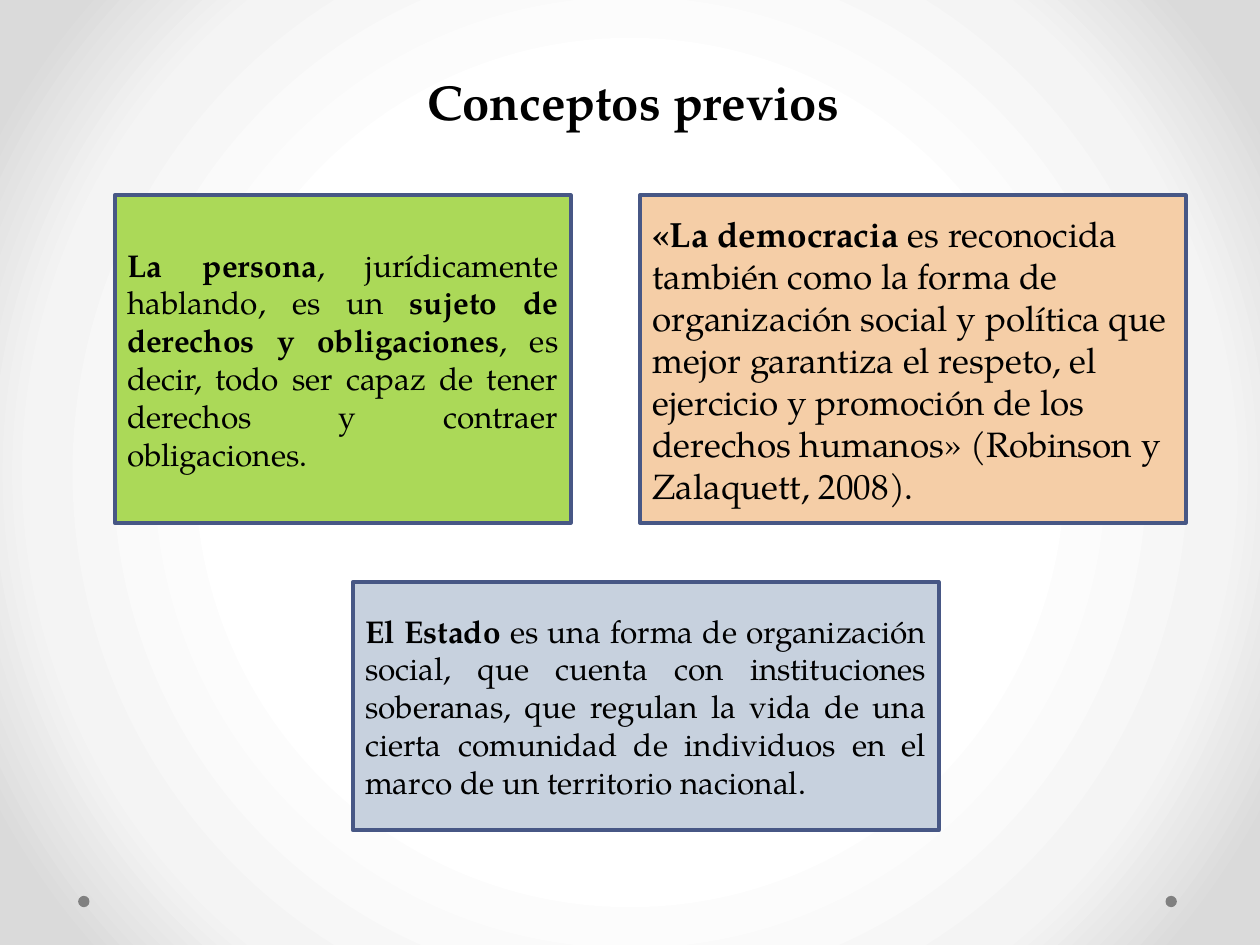
from lxml import etree
from pptx import Presentation
from pptx.dml.color import RGBColor
from pptx.enum.shapes import MSO_SHAPE
from pptx.enum.text import MSO_ANCHOR, PP_ALIGN
from pptx.oxml import parse_xml
from pptx.oxml.ns import nsdecls
from pptx.util import Inches, Pt

RECTANGLE, OVAL = MSO_SHAPE.RECTANGLE, MSO_SHAPE.OVAL
MIDDLE = MSO_ANCHOR.MIDDLE
LEFT, JUSTIFY = PP_ALIGN.LEFT, PP_ALIGN.JUSTIFY
FONT = "TeX Gyre Pagella"
COLORS = {
    "text": "000000", "border": "475785", "dot": "808080",
    "democracy": "F5CEA7", "person": "ABD958", "state": "C7D1DE",
}
BACKGROUND_STOPS = [(50, "FFFFFF"), (76, "F4F4F4"), (92, "DADADA")]


def add_filled_shape(kind, box, color):
    shape = slide.shapes.add_shape(kind, *[Inches(value) for value in box])
    shape.shadow.inherit = False
    shape.fill.solid()
    shape.fill.fore_color.rgb = RGBColor.from_string(COLORS[color])
    shape.line.fill.background()
    return shape


def write_runs(paragraph, runs, size):
    """Write (text, bold) pairs in the slide's font."""
    paragraph.font.name = FONT
    paragraph.font.size = Pt(size)
    paragraph.font.color.rgb = RGBColor.from_string(COLORS["text"])
    for text, bold in runs:
        run = paragraph.add_run()
        run.text = text
        run.font.bold = bold


presentation = Presentation()
presentation.slide_width = Inches(10)
presentation.slide_height = Inches(7.5)
slide = presentation.slides.add_slide(presentation.slide_layouts[6])

# Radial background
slide.background.fill.gradient()
gradient = slide.background.fill._xPr.find(".//{*}gradFill")
for child in list(gradient):
    gradient.remove(child)
stops = "".join(
    f'<a:gs pos="{position * 1000}"><a:srgbClr val="{color}"/></a:gs>'
    for position, color in BACKGROUND_STOPS
)
gradient.append(parse_xml(f'<a:gsLst {nsdecls("a")}>{stops}</a:gsLst>'))
gradient.append(parse_xml(
    f'<a:path {nsdecls("a")} path="circle">'
    '<a:fillToRect l="50000" t="50000" r="50000" b="50000"/></a:path>'
))
etree.cleanup_namespaces(gradient)

# Corner dots
for left in (9.25, 0.62):
    add_filled_shape(OVAL, (left, 7.11, 0.09, 0.09), "dot")

# Concept boxes
concepts = [
    ("democracy", (5.08, 1.55, 4.33, 2.6), 20, LEFT, [
        ("«La democracia ", True),
        ("es reconocida también como la forma de organización social y política "
         "que mejor garantiza el respeto, el ejercicio y promoción de los "
         "derechos humanos» (Robinson y Zalaquett, 2008).", False),
    ]),
    ("person", (0.91, 1.55, 3.62, 2.6), 18, JUSTIFY, [
        ("La persona", True),
        (", jurídicamente hablando, es un ", False),
        ("sujeto de derechos y obligaciones", True),
        (", es decir, todo ser capaz de tener derechos y contraer "
         "obligaciones.", False),
    ]),
    ("state", (2.8, 4.62, 4.65, 1.97), 18, JUSTIFY, [
        ("El Estado ", True),
        ("es una forma de organización social, que cuenta con instituciones "
         "soberanas, que regulan la vida de una cierta comunidad de individuos "
         "en el marco de un territorio nacional.", False),
    ]),
]
for color, box, size, alignment, runs in concepts:
    shape = add_filled_shape(RECTANGLE, box, color)
    shape.line.color.rgb = RGBColor.from_string(COLORS["border"])
    shape.line.width = Pt(2.25)
    shape.text_frame.word_wrap = True
    shape.text_frame.vertical_anchor = MIDDLE
    paragraph = shape.text_frame.paragraphs[0]
    paragraph.alignment = alignment
    write_runs(paragraph, runs, size)

# Title
title = slide.shapes.add_textbox(Inches(1.85), Inches(0.52), Inches(5.83), Inches(0.57))
title.text_frame.word_wrap = True
title.text_frame.margin_left = Inches(1.54)
write_runs(title.text_frame.paragraphs[0], [("Conceptos previos", True)], 28)

presentation.save("out.pptx")
